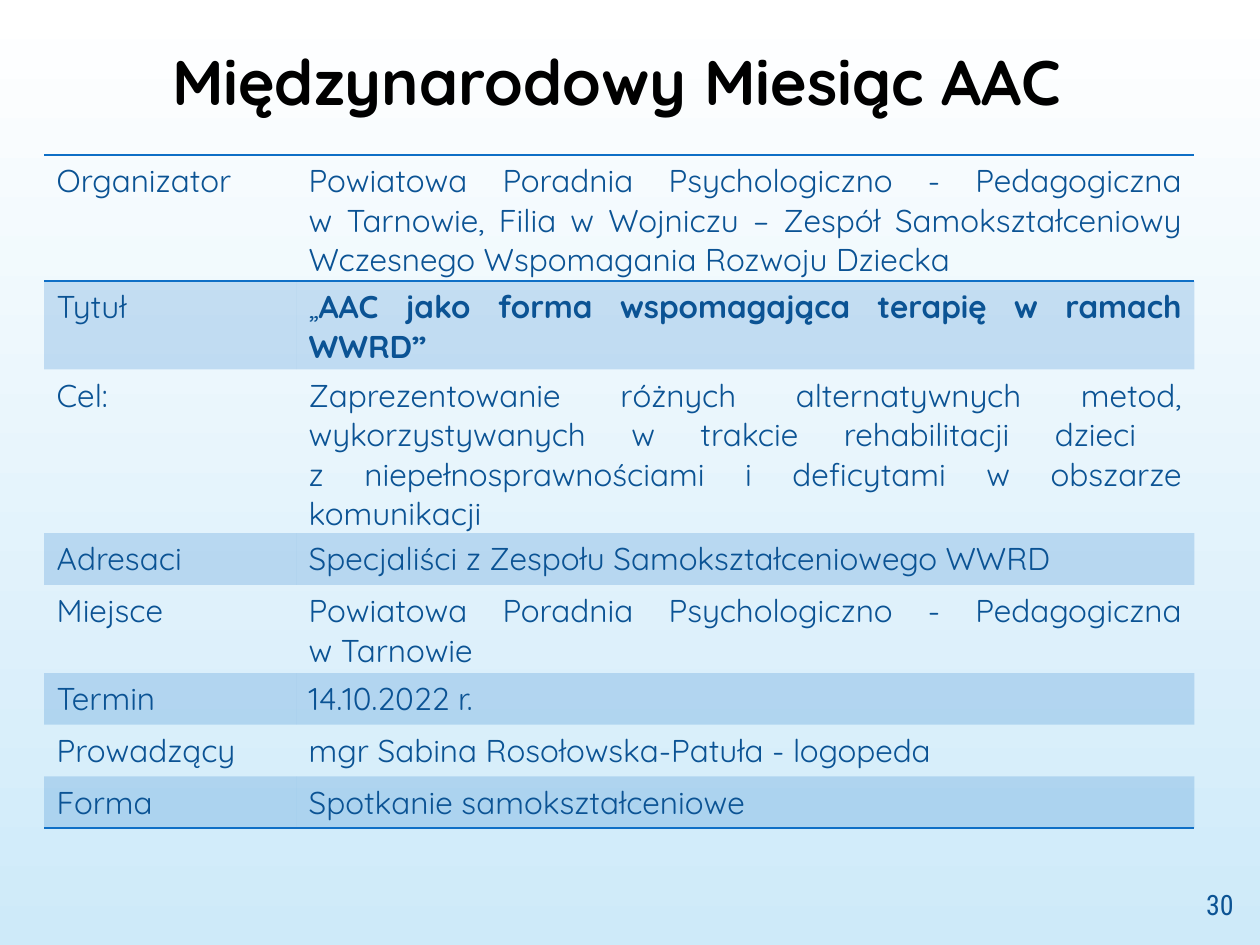
"""Build the AAC month slide: a title, a table of event details and a page number."""
from dataclasses import dataclass

from lxml.etree import SubElement
from pptx import Presentation
from pptx.dml.color import RGBColor
from pptx.enum.text import MSO_ANCHOR, PP_ALIGN
from pptx.oxml.ns import qn
from pptx.slide import Slide
from pptx.table import _Cell
from pptx.text.text import _Paragraph
from pptx.util import Inches, Pt

COLORS = {
    "title": "000000",
    "text": "0B5394",
    "accent": "0F6FC6",
    "sky_top": "FFFFFF",
    "sky_bottom": "CEEAF9",
}
BODY_FONT = "Quicksand"
NUMBER_FONT = "Roboto Condensed"
PLAIN_TABLE_STYLE = "{2D5ABB26-0587-4C30-8999-92F81FD0307C}"
COLUMN_WIDTHS = (2, 7.13)
ROW_HEIGHT = 0.41
BAND_OPACITY = 20


@dataclass(frozen=True)
class Detail:
    """One table row: a label and its value, with an optional lead before a bold value."""

    label: str
    value: str
    justified: bool = False
    bold: bool = False
    lead: str = ""


DETAILS = (
    Detail(
        "Organizator",
        "Powiatowa Poradnia Psychologiczno - Pedagogiczna\n"
        "w Tarnowie, Filia w Wojniczu – Zespół Samokształceniowy "
        "Wczesnego Wspomagania Rozwoju Dziecka",
        justified=True,
    ),
    Detail(
        "Tytuł",
        "AAC jako forma wspomagająca terapię w ramach WWRD”",
        justified=True,
        bold=True,
        lead="„",
    ),
    Detail(
        "Cel:",
        "Zaprezentowanie różnych alternatywnych metod, "
        "wykorzystywanych w trakcie rehabilitacji dzieci \n"
        "z niepełnosprawnościami i deficytami w obszarze komunikacji",
        justified=True,
    ),
    Detail("Adresaci", "Specjaliści z Zespołu Samokształceniowego WWRD"),
    Detail(
        "Miejsce",
        "Powiatowa Poradnia Psychologiczno - Pedagogiczna\nw Tarnowie ",
        justified=True,
    ),
    Detail("Termin", "14.10.2022 r."),
    Detail("Prowadzący", "mgr Sabina Rosołowska-Patuła - logopeda"),
    Detail("Forma", "Spotkanie samokształceniowe"),
)


def write(
    paragraph: _Paragraph,
    text: str,
    *,
    size: float = 18,
    font: str = BODY_FONT,
    color: str = "text",
    bold: bool = False,
    align: PP_ALIGN = PP_ALIGN.LEFT,
) -> None:
    """Append formatted text to a paragraph, turning newlines into line breaks."""
    paragraph.alignment = align
    for index, line in enumerate(text.split("\n")):
        if index:
            paragraph.add_line_break()
        span = paragraph.add_run()
        span.text = line
        span.font.size = Pt(size)
        span.font.name = font
        span.font.bold = bold
        span.font.color.rgb = RGBColor.from_string(COLORS[color])


def add_box(
    page: Slide, left: float, top: float, width: float, height: float, anchor: MSO_ANCHOR
) -> _Paragraph:
    """Add a wrapping text box and return its first paragraph."""
    box = page.shapes.add_textbox(Inches(left), Inches(top), Inches(width), Inches(height))
    box.text_frame.word_wrap = True
    box.text_frame.vertical_anchor = anchor
    return box.text_frame.paragraphs[0]


def add_border(cell: _Cell, side: str) -> None:
    """Draw a thin accent line on one side of a cell."""
    line = SubElement(cell._tc.get_or_add_tcPr(), qn(f"a:ln{side}"), w=str(Pt(1)))
    SubElement(SubElement(line, qn("a:solidFill")), qn("a:srgbClr"), val=COLORS["accent"])


def fill_band(cell: _Cell) -> None:
    """Fill a cell with the translucent accent colour."""
    cell.fill.solid()
    cell.fill.fore_color.rgb = RGBColor.from_string(COLORS["accent"])
    shade = cell._tc.tcPr.find(qn("a:solidFill")).find(qn("a:srgbClr"))
    SubElement(shade, qn("a:alpha"), val=str(BAND_OPACITY * 1000))


def add_details(page: Slide, details: tuple[Detail, ...]) -> None:
    """Add the two-column table with every second row banded."""
    table = page.shapes.add_table(
        len(details),
        len(COLUMN_WIDTHS),
        Inches(0.35),
        Inches(1.23),
        Inches(sum(COLUMN_WIDTHS)),
        Inches(ROW_HEIGHT * len(details)),
    ).table
    table.first_row = table.horz_banding = False
    table._tbl.tblPr.find(qn("a:tableStyleId")).text = PLAIN_TABLE_STYLE
    for column, width in zip(table.columns, COLUMN_WIDTHS):
        column.width = Inches(width)
    for index, (row, detail) in enumerate(zip(table.rows, details)):
        row.height = Inches(ROW_HEIGHT)
        sides = {0: "TB", len(details) - 1: "B"}.get(index, "")
        for cell in row.cells:
            for side in sides:
                add_border(cell, side)
            if index % 2:
                fill_band(cell)
            else:
                cell.fill.background()
        label, value = (cell.text_frame.paragraphs[0] for cell in row.cells)
        align = PP_ALIGN.JUSTIFY if detail.justified else PP_ALIGN.LEFT
        write(label, detail.label)
        if detail.lead:
            write(value, detail.lead, align=align)
        write(value, detail.value, bold=detail.bold, align=align)


def paint_background(page: Slide) -> None:
    """Fill the page with a vertical gradient."""
    fill = page.background.fill
    fill.gradient()
    fill.gradient_angle = 270
    for stop, name in zip(fill.gradient_stops, ("sky_top", "sky_bottom")):
        stop.color.rgb = RGBColor.from_string(COLORS[name])


def main() -> None:
    """Build and save the deck."""
    deck = Presentation()
    deck.slide_width, deck.slide_height = Inches(10), Inches(7.5)
    page = deck.slides.add_slide(deck.slide_layouts[6])
    paint_background(page)
    title = add_box(page, 0.51, 0.29, 8.77, 0.94, MSO_ANCHOR.TOP)
    write(
        title,
        "Międzynarodowy Miesiąc AAC",
        size=36,
        color="title",
        bold=True,
        align=PP_ALIGN.CENTER,
    )
    add_details(page, DETAILS)
    number = add_box(page, 9.25, 6.98, 0.64, 0.4, MSO_ANCHOR.MIDDLE)
    write(number, "30", size=16, font=NUMBER_FONT, align=PP_ALIGN.RIGHT)
    deck.save("out.pptx")


if __name__ == "__main__":
    main()
